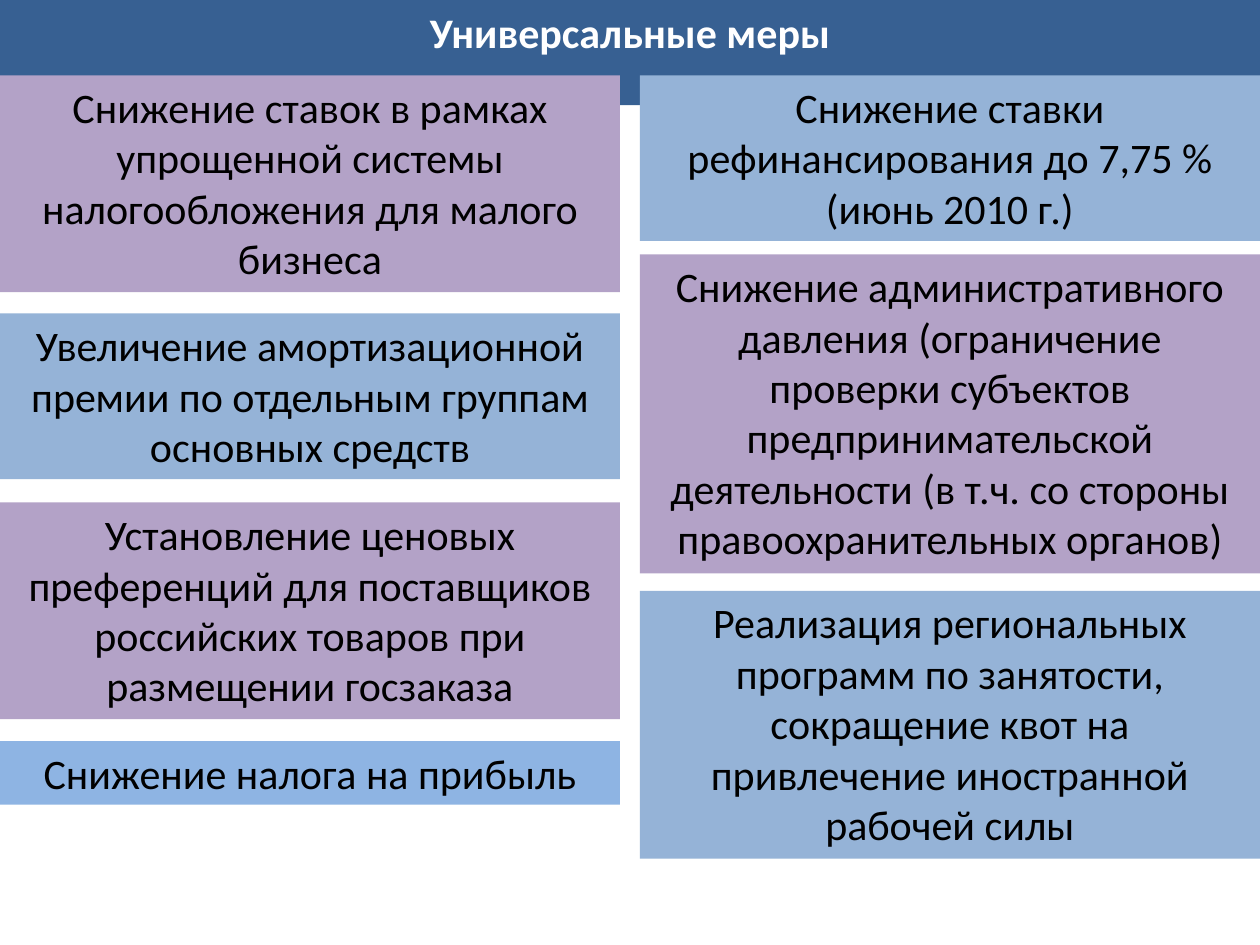
from dataclasses import dataclass

from pptx import Presentation
from pptx.dml.color import RGBColor as Rgb
from pptx.enum.text import MSO_ANCHOR as Anchor, MSO_AUTO_SIZE as AutoSize, PP_ALIGN as Align
from pptx.util import Cm, Pt


@dataclass(frozen=True)
class Theme:
    font: str = "Calibri"
    size: int = 24
    header: str = "376092"
    header_text: str = "FFFFFF"
    text: str = "000000"
    blue: str = "95B3D7"
    bright_blue: str = "8EB4E3"
    violet: str = "B3A2C7"


THEME = Theme()
HEADING = "Универсальные меры"
LEFT_MEASURES = [
    (1.52, 4, THEME.violet, "Снижение ставок в рамках упрощенной системы налогообложения для малого бизнеса"),
    (6.32, 3, THEME.blue, "Увеличение амортизационной премии по отдельным группам основных средств"),
    (10.13, 4, THEME.violet, "Установление ценовых преференций для поставщиков российских товаров при размещении госзаказа"),
    (14.94, 1, THEME.bright_blue, "Снижение налога на прибыль"),
]
RIGHT_MEASURES = [
    (1.52, 3, THEME.blue, "Снижение ставки рефинансирования до 7,75 % (июнь 2010 г.)"),
    (5.13, 6, THEME.violet, "Снижение административного давления (ограничение проверки субъектов "
                            "предпринимательской деятельности (в т.ч. со стороны правоохранительных органов)"),
    (11.91, 5, THEME.blue, "Реализация региональных программ по занятости, сокращение квот на "
                           "привлечение иностранной рабочей силы"),
]
SLIDE_WIDTH, SLIDE_HEIGHT = 25.4, 19.05
COLUMN_WIDTH = 12.5
LINE_HEIGHT, PADDING = 1.03, 0.25


def block_height(lines):
    return Cm(PADDING + lines * LINE_HEIGHT)


def style_block(block, wording, fill, color, bold=False):
    block.fill.solid()
    block.fill.fore_color.rgb = Rgb.from_string(fill)
    frame = block.text_frame
    frame.text = wording
    frame.word_wrap = True
    frame.auto_size = AutoSize.SHAPE_TO_FIT_TEXT
    frame.vertical_anchor = Anchor.TOP
    paragraph = frame.paragraphs[0]
    paragraph.alignment = Align.CENTER
    paragraph.font.name = THEME.font
    paragraph.font.size = Pt(THEME.size)
    paragraph.font.bold = bold
    paragraph.font.color.rgb = Rgb.from_string(color)


def main():
    deck = Presentation()
    deck.slide_width, deck.slide_height = Cm(SLIDE_WIDTH), Cm(SLIDE_HEIGHT)
    slide = deck.slides.add_slide(deck.slide_layouts[5])

    heading = slide.shapes.title
    heading.left, heading.top = Cm(0), Cm(0)
    heading.width, heading.height = Cm(SLIDE_WIDTH), block_height(1)
    style_block(heading, HEADING, THEME.header, THEME.header_text, bold=True)

    for left, measures in ((0, LEFT_MEASURES), (SLIDE_WIDTH - COLUMN_WIDTH, RIGHT_MEASURES)):
        for top, lines, fill, wording in measures:
            measure = slide.shapes.add_textbox(Cm(left), Cm(top), Cm(COLUMN_WIDTH), block_height(lines))
            style_block(measure, wording, fill, THEME.text)

    deck.save("out.pptx")


if __name__ == "__main__":
    main()
